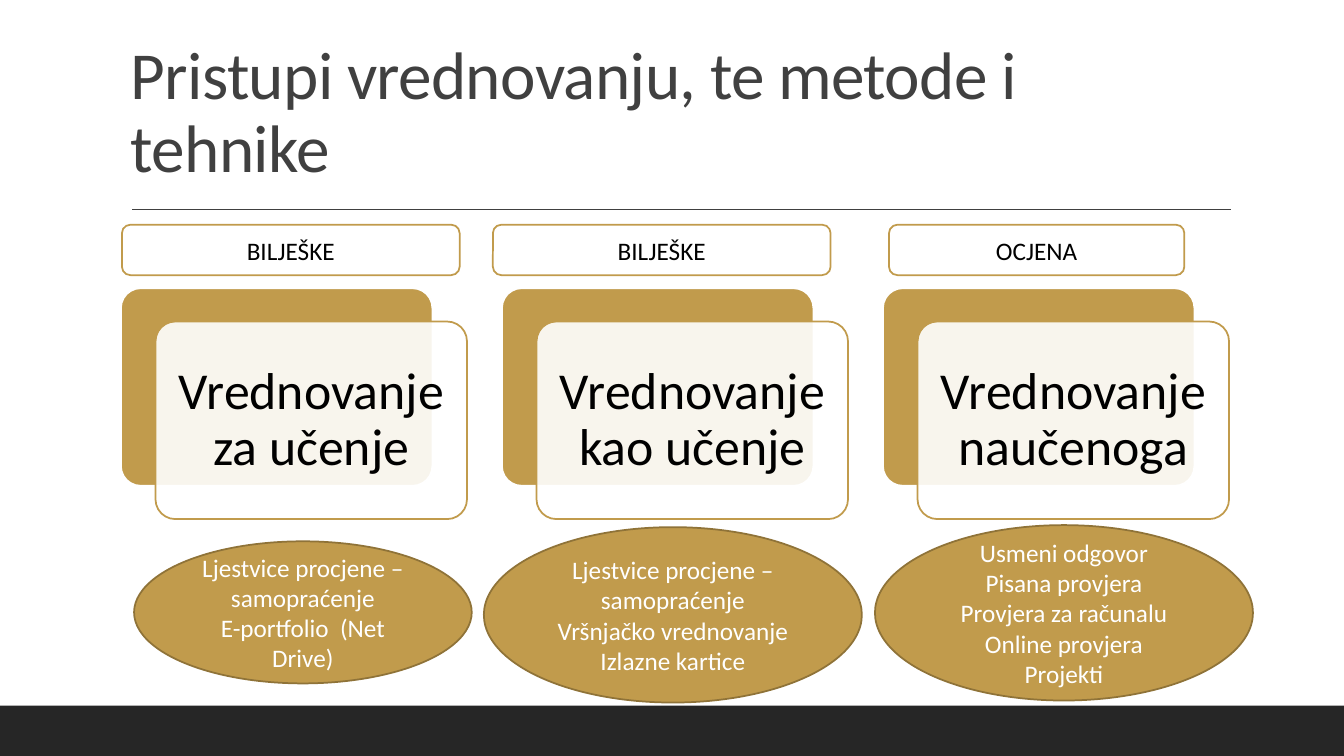
from lxml import etree
from pptx import Presentation
from pptx import util as u
from pptx.dml.color import RGBColor
from pptx.enum import shapes, text
from pptx.oxml.ns import qn

COLORS = {
    "gold": "C19B4C",
    "bronze": "8F7338",
    "white": "FFFFFF",
    "black": "000000",
    "grey": "404040",
    "footer": "262626",
}
FONT = "Calibri"
COLS, ROWS = 40, 30

APPROACHES = ["Vrednovanje za učenje", "Vrednovanje kao učenje", "Vrednovanje naučenoga"]
CARD_LEFT, CARD_TOP, CARD_STEP = 3.6, 11.44, 11.34
CARD_SIZE = (9.27, 7.84)
PANEL_SHIFT = (1.03, 1.32)

METHODS = [
    ((3.99, 21.48, 10.05, 5.64),
     ["Ljestvice procjene – samopraćenje", "E-portfolio  (Net Drive)"]),
    ((14.4, 20.92, 11.25, 6.96),
     ["Ljestvice procjene – samopraćenje", "Vršnjačko vrednovanje", "Izlazne kartice"]),
    ((26.04, 20.84, 11.25, 6.96),
     ["Usmeni odgovor", "Pisana provjera", "Provjera za računalu", "Online provjera", "Projekti"]),
]

RECORD_TOP, RECORD_HEIGHT = 8.92, 2
RECORDS = [(3.63, 10.05, "BILJEŠKE"), (14.67, 10.05, "BILJEŠKE"), (26.46, 8.79, "OCJENA")]


def rgb(name):
    return RGBColor.from_string(COLORS[name])


class Deck:
    """Draws on one slide; lengths are columns and rows of a 40 by 30 grid."""

    def __init__(self):
        self.prs = Presentation()
        self.prs.slide_width, self.prs.slide_height = u.Inches(13.333), u.Inches(7.5)
        self.s = self.prs.slides.add_slide(self.prs.slide_layouts[6])

    def x(self, cols):
        return round(self.prs.slide_width * cols / COLS)

    def y(self, rows):
        return round(self.prs.slide_height * rows / ROWS)

    def place(self, left, top, width, height):
        return self.x(left), self.y(top), self.x(width), self.y(height)

    def fill_text(self, sp, lines, size, color, spacing=None, align=text.PP_ALIGN.CENTER,
                  anchor=text.MSO_ANCHOR.MIDDLE):
        tf = sp.text_frame
        tf.word_wrap = True
        tf.vertical_anchor = anchor
        tf.text = "\n".join(lines)
        for p in tf.paragraphs:
            p.alignment = align
            p.line_spacing = spacing
            p.font.name, p.font.size = FONT, u.Pt(size)
            p.font.color.rgb = rgb(color)
        return tf

    def title(self, box, words):
        sp = self.s.shapes.add_textbox(*self.place(*box))
        tf = self.fill_text(sp, [words], 48, "grey", 0.9, text.PP_ALIGN.LEFT,
                            text.MSO_ANCHOR.BOTTOM)
        r = tf.paragraphs[0].runs[0]
        r._r.get_or_add_rPr().set("spc", "-50")

    def shape(self, kind, box, fill, line=None, radius=None, alpha=None):
        sp = self.s.shapes.add_shape(kind, *self.place(*box))
        sp.shadow.inherit = False
        sp.fill.solid()
        sp.fill.fore_color.rgb = rgb(fill)
        if alpha is not None:
            color = sp._element.spPr.find(qn("a:solidFill"))[0]
            etree.SubElement(color, qn("a:alpha"), val=str(alpha * 1000))
        if line:
            sp.line.color.rgb = rgb(line)
            sp.line.width = u.Pt(1.25)
        else:
            sp.line.fill.background()
        if radius is not None:
            sp.adjustments[0] = radius
        return sp

    def rule(self, left, right, top):
        c = self.s.shapes.add_connector(shapes.MSO_CONNECTOR.STRAIGHT, self.x(left),
                                        self.y(top), self.x(right), self.y(top))
        c.line.color.rgb = rgb("grey")
        c.line.width = u.Pt(1)
        etree.SubElement(c._element.spPr, qn("a:effectLst"))

    def card(self, left, top, words):
        """Gold block with a translucent panel shifted down and right over it."""
        rounded = shapes.MSO_SHAPE.ROUNDED_RECTANGLE
        self.shape(rounded, (left, top, *CARD_SIZE), "gold", "white", 0.1)
        dx, dy = PANEL_SHIFT
        panel = self.shape(rounded, (left + dx, top + dy, *CARD_SIZE), "white", "gold", 0.1, 90)
        tf = self.fill_text(panel, [words], 37, "black", 0.9)
        tf.margin_left = tf.margin_right = tf.margin_top = tf.margin_bottom = u.Inches(0.15)

    def oval(self, box, lines):
        sp = self.shape(shapes.MSO_SHAPE.OVAL, box, "gold", "bronze")
        self.fill_text(sp, lines, 18, "white")

    def label(self, box, words):
        sp = self.shape(shapes.MSO_SHAPE.ROUNDED_RECTANGLE, box, "white", "gold")
        self.fill_text(sp, [words], 18, "black")


def main():
    deck = Deck()
    deck.shape(shapes.MSO_SHAPE.RECTANGLE, (0, 28, COLS, 2), "footer")
    deck.rule(3.93, 36.63, 8.32)
    deck.title((3.6, 1.24, 33, 6.36), "Pristupi vrednovanju, te metode i tehnike")
    for i, words in enumerate(APPROACHES):
        deck.card(CARD_LEFT + i * CARD_STEP, CARD_TOP, words)
    for box, lines in METHODS:
        deck.oval(box, lines)
    for left, width, words in RECORDS:
        deck.label((left, RECORD_TOP, width, RECORD_HEIGHT), words)
    deck.prs.save("out.pptx")


if __name__ == "__main__":
    main()
